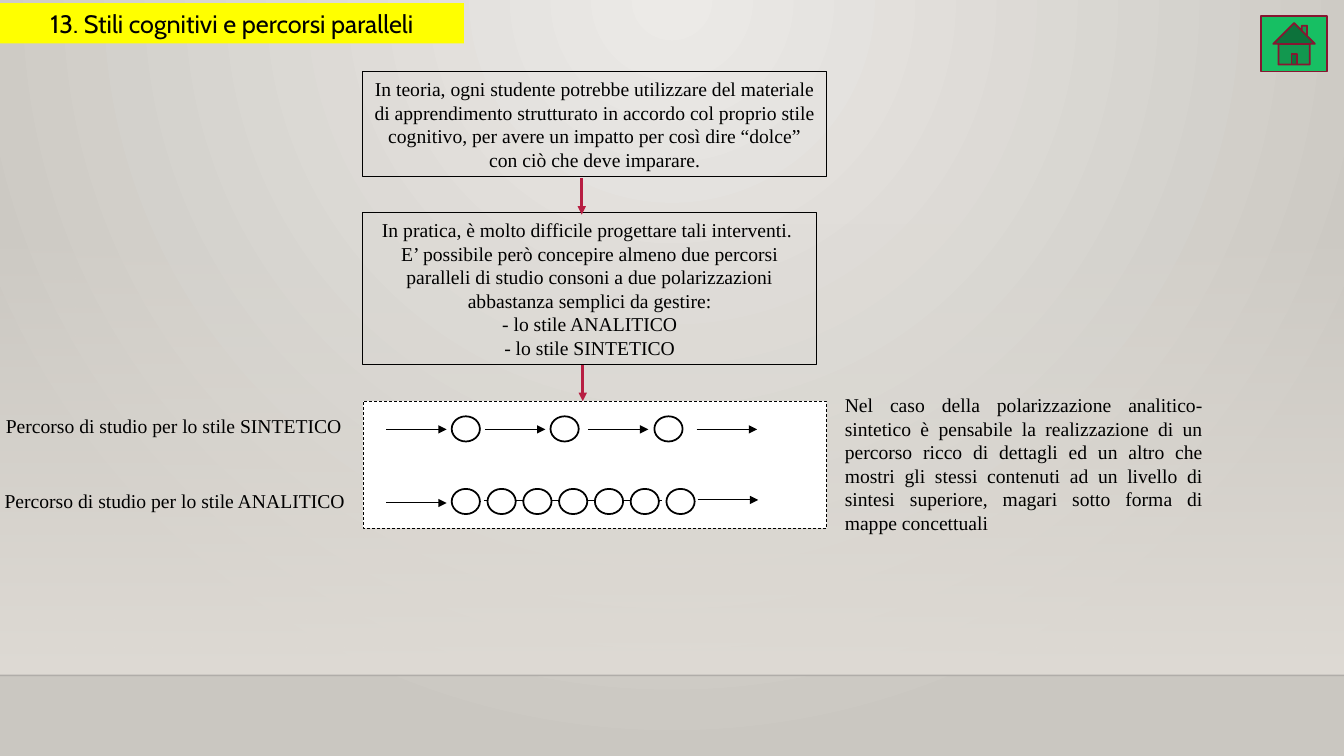
from lxml import etree
from pptx import Presentation
from pptx.dml.color import RGBColor
from pptx.enum.dml import MSO_LINE_DASH_STYLE as Dash
from pptx.enum.shapes import MSO_CONNECTOR as Connector, MSO_SHAPE as Shape
from pptx.enum.text import MSO_ANCHOR as Anchor, MSO_AUTO_SIZE as AutoSize, PP_ALIGN as Align
from pptx.oxml import parse_xml
from pptx.oxml.ns import nsdecls, qn
from pptx.util import Inches, Pt

BLACK = RGBColor(0x00, 0x00, 0x00)
WHITE = RGBColor(0xFF, 0xFF, 0xFF)
YELLOW = RGBColor(0xFF, 0xFF, 0x00)
GREEN = RGBColor(0x17, 0xBF, 0x63)
WINE = RGBColor(0x87, 0x16, 0x31)
CRIMSON = RGBColor(0xB7, 0x1E, 0x42)
HORIZON = RGBColor(0x00, 0x00, 0x01)
PALE = RGBColor(0xEC, 0xEA, 0xE7)
STONE = RGBColor(0xCA, 0xC7, 0xC1)
SAND = RGBColor(0xDF, 0xDB, 0xD5)

RADIAL = ('<a:path %s path="circle">'
          '<a:fillToRect l="43000" t="0" r="43000" b="100000"/></a:path>')
DOWNWARD = '<a:lin %s ang="5400000" scaled="0"/>'


def set_alpha(color_element, percent):
    etree.SubElement(color_element, qn("a:alpha")).set("val", str(percent * 1000))


def set_gradient(fill, fill_parent, colors, direction):
    fill.gradient()
    for stop, color, position in zip(fill.gradient_stops, colors, (0, 1)):
        stop.color.rgb = color
        stop.position = position
    gradient = fill_parent.find(qn("a:gradFill"))
    gradient.replace(gradient.find(qn("a:lin")), parse_xml(direction % nsdecls("a")))
    return gradient


def write_text(frame, text, font="Times New Roman", size=14, color=BLACK,
               align=Align.CENTER, anchor=Anchor.MIDDLE):
    frame.word_wrap = True
    frame.auto_size = AutoSize.NONE
    frame.vertical_anchor = anchor
    frame.margin_left = frame.margin_right = Inches(0.1)
    frame.margin_top = frame.margin_bottom = Inches(0.05)
    for index, line in enumerate(text.split("\n")):
        para = frame.paragraphs[0] if index == 0 else frame.add_paragraph()
        para.alignment = align
        para.line_spacing = 1.0
        para.space_before = Pt(0)
        span = para.add_run()
        span.text = line
        span.font.name = font
        span.font.size = Pt(size)
        span.font.color.rgb = color


class StylePage:
    circle_width = 0.28
    circle_height = 0.25
    arrow_length = 0.6

    def __init__(self, deck):
        self.page = deck.slides.add_slide(deck.slide_layouts[5])

    def background(self):
        fill = self.page.background.fill
        properties = self.page.background._cSld.bg.bgPr
        set_gradient(fill, properties, (PALE, STONE), RADIAL)

    def title(self, text, left, top, width, height):
        box = self.page.shapes.title
        box.left, box.top = Inches(left), Inches(top)
        box.width, box.height = Inches(width), Inches(height)
        box.fill.solid()
        box.fill.fore_color.rgb = YELLOW
        write_text(box.text_frame, text, font="Cabin", size=18)

    def shape(self, kind, left, top, width, height, fill=None, line=None,
              weight=0.75, dash=None):
        shape = self.page.shapes.add_shape(
            kind, Inches(left), Inches(top), Inches(width), Inches(height))
        shape.shadow.inherit = False
        if fill is None:
            shape.fill.background()
        else:
            shape.fill.solid()
            shape.fill.fore_color.rgb = fill
        if line is None:
            shape.line.fill.background()
        else:
            shape.line.color.rgb = line
            shape.line.width = Pt(weight)
        if dash:
            shape.line.dash_style = dash
        return shape

    def band(self, left, top, width, height):
        band = self.shape(Shape.RECTANGLE, left, top, width, height)
        gradient = set_gradient(band.fill, band.element.spPr, (SAND, SAND), DOWNWARD)
        set_alpha(gradient.find(".//" + qn("a:srgbClr")), 0)

    def framed_text(self, text, left, top, width, height):
        box = self.shape(Shape.RECTANGLE, left, top, width, height, line=BLACK)
        write_text(box.text_frame, text)

    def label(self, text, left, top, width, height, align=Align.CENTER):
        box = self.page.shapes.add_textbox(
            Inches(left), Inches(top), Inches(width), Inches(height))
        write_text(box.text_frame, text, align=align, anchor=Anchor.TOP)

    def line(self, start, end, color=BLACK, weight=0.75, arrow=False, alpha=None):
        line = self.page.shapes.add_connector(
            Connector.STRAIGHT, *(Inches(value) for value in (*start, *end)))
        line.line.color.rgb = color
        line.line.width = Pt(weight)
        outline = line.element.spPr.find(qn("a:ln"))
        if alpha is not None:
            set_alpha(outline.find(".//" + qn("a:srgbClr")), alpha)
        if arrow:
            etree.SubElement(outline, qn("a:tailEnd")).set("type", "triangle")
        etree.SubElement(line.element.spPr, qn("a:effectLst"))

    def step_arrow(self, left, top):
        self.line((left, top), (left + self.arrow_length, top), arrow=True)

    def circle(self, left, top):
        self.shape(Shape.OVAL, left, top, self.circle_width, self.circle_height,
                   fill=WHITE, line=BLACK, weight=1.25)


def main():
    deck = Presentation()
    deck.slide_width, deck.slide_height = Inches(13.33), Inches(7.5)
    slide = StylePage(deck)

    slide.background()
    slide.band(0, 2.21, 13.33, 4.49)
    slide.line((0, 6.7), (13.33, 6.7), color=HORIZON, weight=1, alpha=20)
    slide.title("13. Stili cognitivi e percorsi paralleli", 0, 0.03, 4.6, 0.4)
    slide.shape(Shape.ACTION_BUTTON_HOME, 12.51, 0.16, 0.65, 0.55,
                fill=GREEN, line=WINE, weight=1.25)

    slide.framed_text(
        "In teoria, ogni studente potrebbe utilizzare del materiale di apprendimento "
        "strutturato in accordo col proprio stile cognitivo, per avere un impatto "
        "per così dire “dolce” con ciò che deve imparare.", 3.6, 0.71, 4.6, 1.04)
    slide.framed_text(
        "In pratica, è molto difficile progettare tali interventi. \n"
        "E’ possibile però concepire almeno due percorsi paralleli di studio consoni "
        "a due polarizzazioni abbastanza semplici da gestire:\n"
        "- lo stile ANALITICO\n- lo stile SINTETICO", 3.6, 2.11, 4.5, 1.51)

    slide.shape(Shape.RECTANGLE, 3.6, 3.98, 4.6, 1.26, fill=WHITE, line=BLACK,
                weight=0.5, dash=Dash.DASH)
    for left, top in ((5.77, 1.77), (5.78, 3.62)):
        slide.line((left, top), (left, top + 0.36), color=CRIMSON, weight=2, arrow=True)

    for left in (4.48, 5.46, 6.49):
        slide.circle(left, 4.13)
    for left in (3.83, 4.81, 5.83, 6.91):
        slide.step_arrow(left, 4.26)

    slide.line((4.8, 4.97), (6.57, 4.97))
    for step in range(7):
        slide.circle(4.48 + 0.355 * step, 4.85)
    slide.step_arrow(3.83, 4.99)
    slide.step_arrow(6.92, 4.96)

    for style, left, top in (("SINTETICO", -0.15, 4.06), ("ANALITICO", -0.14, 4.8)):
        slide.label(f"Percorso di studio per lo stile {style}", left, top, 3.75, 0.34)
    slide.label(
        "Nel caso della polarizzazione analitico-sintetico è pensabile la realizzazione "
        "di un percorso ricco di dettagli ed un altro che mostri gli stessi contenuti "
        "ad un livello di sintesi superiore, magari sotto forma di mappe concettuali",
        8.28, 3.85, 3.75, 1.51, align=Align.JUSTIFY)

    deck.save("out.pptx")


if __name__ == "__main__":
    main()
